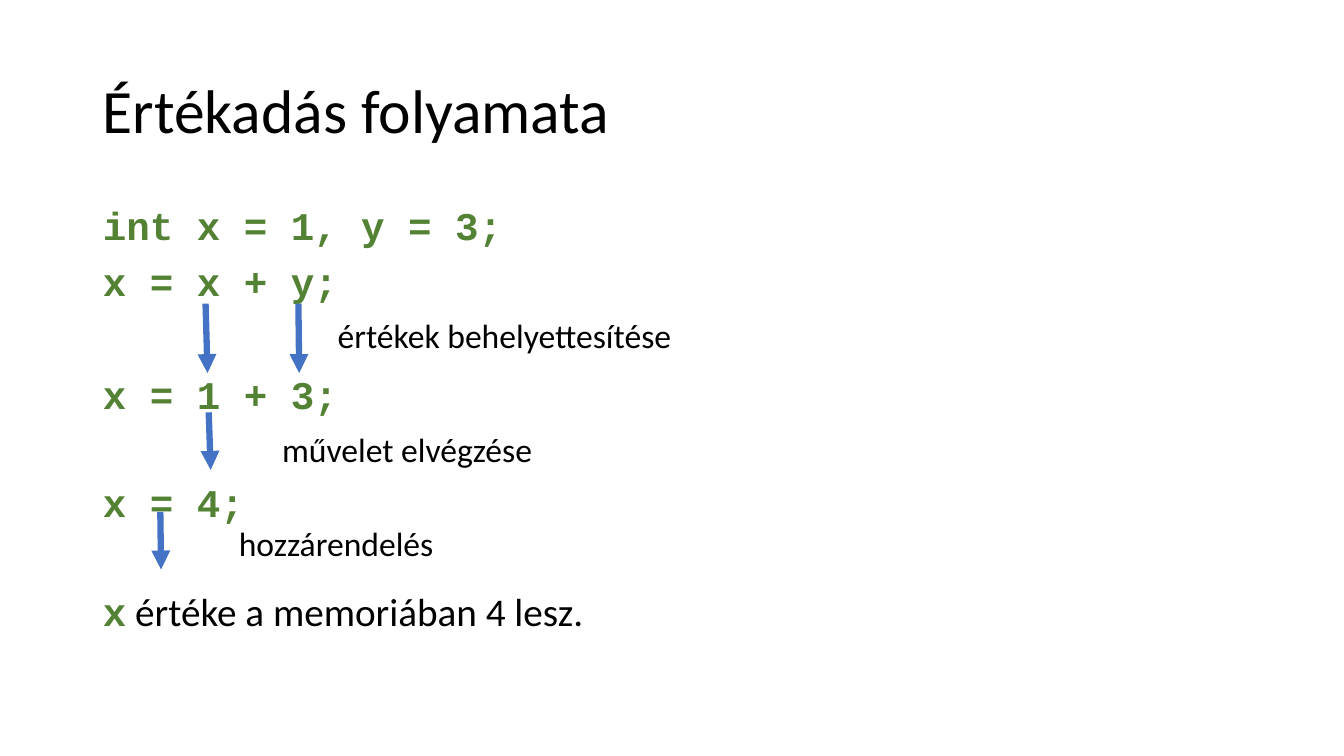
"""Build a slide that shows the steps of an assignment in code."""
from lxml import etree
from pptx import Presentation
from pptx.dml.color import RGBColor
from pptx.enum.shapes import MSO_CONNECTOR
from pptx.enum.text import MSO_ANCHOR, MSO_AUTO_SIZE, PP_ALIGN
from pptx.oxml.ns import qn
from pptx.util import Cm, Pt

STRAIGHT = MSO_CONNECTOR.STRAIGHT
MIDDLE = MSO_ANCHOR.MIDDLE
NO_FIT = MSO_AUTO_SIZE.NONE
GROW = MSO_AUTO_SIZE.SHAPE_TO_FIT_TEXT
LEFT = PP_ALIGN.LEFT

BLACK = RGBColor(0x00, 0x00, 0x00)
GREEN = RGBColor(0x54, 0x82, 0x35)
BLUE = RGBColor(0x44, 0x72, 0xC4)
TEXT_FONT, CODE_FONT = "Calibri", "Courier New"

TITLE = "Értékadás folyamata"
# code, plain text, line spacing, space before in points
STEPS = [
    ("int x = 1, y = 3;", "", 0.9, 10),
    ("x = x + y;", "", 0.9, 10),
    ("x = 1 + 3;", "", 0.9, 50),
    ("x = 4;", "", 2.0, 10),
    ("x", " értéke a memoriában 4 lesz.", 2.0, 10),
]
LABELS = [
    ("értékek behelyettesítése", 8.26, 7.82, 9.02),
    ("művelet elvégzése", 6.86, 10.69, 6.88),
    ("hozzárendelés", 5.77, 13.06, 5.46),
]
ARROWS = [
    (5.18, 7.65, 5.23, 9.4),
    (7.52, 7.65, 7.54, 9.4),
    (5.26, 10.39, 5.31, 11.84),
    (4.04, 12.9, 4.06, 14.35),
]


def set_font(font, name, size, color, bold=False):
    font.name, font.size, font.bold = name, Pt(size), bold
    font.color.rgb = color


def place(box, left, top, width, height):
    box.left, box.top = Cm(left), Cm(top)
    box.width, box.height = Cm(width), Cm(height)


def add_title(page):
    box = page.shapes.title
    place(box, 2.34, 1.02, 29.21, 3.68)
    frame = box.text_frame
    frame.text = TITLE
    frame.vertical_anchor = MIDDLE
    para = frame.paragraphs[0]
    para.alignment, para.line_spacing = LEFT, 0.9
    set_font(para.font, TEXT_FONT, 44, BLACK)


def add_steps(page):
    box = page.placeholders[1]
    place(box, 2.34, 5.08, 29.21, 12.09)
    frame = box.text_frame
    frame.auto_size = NO_FIT
    for index, (code, text, spacing, before) in enumerate(STEPS):
        para = frame.add_paragraph() if index else frame.paragraphs[0]
        para.line_spacing, para.space_before = spacing, Pt(before)
        properties = para._p.get_or_add_pPr()
        properties.set("marL", "0")
        properties.set("indent", "0")
        etree.SubElement(properties, qn("a:buNone"))
        set_font(para.font, CODE_FONT, 28, GREEN, True)
        para.add_run().text = code
        if text:
            span = para.add_run()
            span.text = text
            set_font(span.font, TEXT_FONT, 28, BLACK)
            set_font(para.runs[0].font, CODE_FONT, 28, GREEN, True)


def add_label(page, text, left, top, width):
    box = page.shapes.add_textbox(Cm(left), Cm(top), Cm(width), Cm(1.27))
    frame = box.text_frame
    frame.word_wrap, frame.auto_size = False, GROW
    frame.text = text
    set_font(frame.paragraphs[0].font, TEXT_FONT, 24, BLACK)


def add_arrow(page, *ends):
    arrow = page.shapes.add_connector(STRAIGHT, *map(Cm, ends))
    arrow.line.color.rgb, arrow.line.width = BLUE, Pt(4.5)
    etree.SubElement(arrow.line._get_or_add_ln(), qn("a:tailEnd"), type="triangle")
    etree.SubElement(arrow._element.spPr, qn("a:effectLst"))


def main():
    deck = Presentation()
    deck.slide_width, deck.slide_height = Cm(33.87), Cm(19.05)
    page = deck.slides.add_slide(deck.slide_layouts[1])
    add_title(page)
    add_steps(page)
    for label in LABELS:
        add_label(page, *label)
    for arrow in ARROWS:
        add_arrow(page, *arrow)
    deck.save("out.pptx")


if __name__ == "__main__":
    main()
